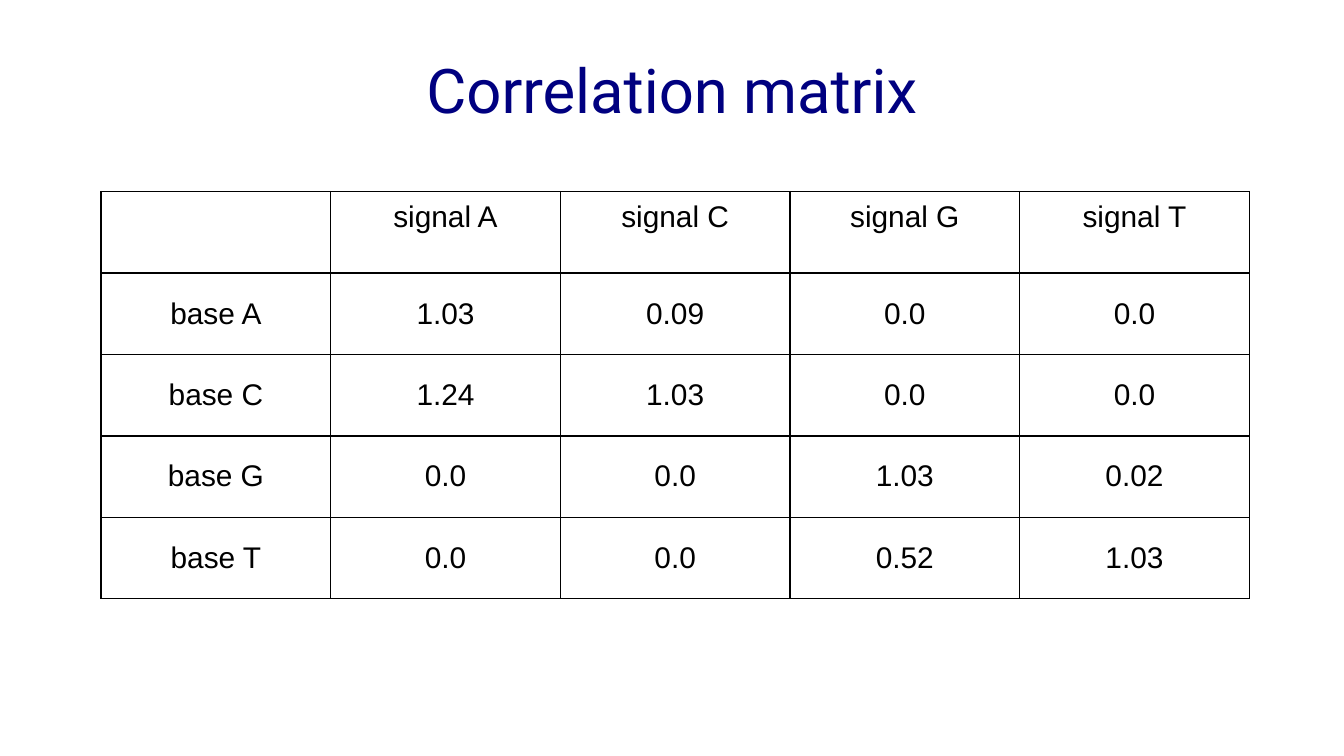
from lxml.etree import SubElement
from pptx import Presentation
from pptx.dml.color import RGBColor
from pptx.enum.text import MSO_ANCHOR, PP_ALIGN
from pptx.oxml.ns import qn
from pptx.util import Cm, Pt

ROWS = [
    ["", "signal A", "signal C", "signal G", "signal T"],
    ["base A", "1.03", "0.09", "0.0", "0.0"],
    ["base C", "1.24", "1.03", "0.0", "0.0"],
    ["base G", "0.0", "0.0", "1.03", "0.02"],
    ["base T", "0.0", "0.0", "0.52", "1.03"],
]
WIDE, HIGH = 4.34, 1.54


def color(code):
    return RGBColor.from_string(code)


def write(frame, text, size=16, font="Arial", ink="000000", space=1.0):
    para = frame.paragraphs[0]
    para.alignment = PP_ALIGN.CENTER
    para.line_spacing = space
    para.font.size = Pt(size)
    if text:
        run = para.add_run()
        run.text = text
        run.font.size = Pt(size)
        run.font.name = font
        run.font.color.rgb = color(ink)


def pad(box, side, end):
    box.margin_left = box.margin_right = Cm(side)
    box.margin_top = box.margin_bottom = Cm(end)


def border(cell, ink="000000", width=0.75):
    props = cell._tc.get_or_add_tcPr()
    for side in ("lnL", "lnR", "lnT", "lnB"):
        line = SubElement(props, qn(f"a:{side}"), w=str(Pt(width)))
        fill = SubElement(line, qn("a:solidFill"))
        SubElement(fill, qn("a:srgbClr"), val=ink)


def title(slide, text):
    box = slide.shapes.add_textbox(Cm(1.27), Cm(0.56), Cm(22.86), Cm(2.39))
    frame = box.text_frame
    frame.word_wrap = True
    frame.vertical_anchor = MSO_ANCHOR.MIDDLE
    pad(frame, 0.2, 0.2)
    write(frame, text, size=33, font="Roboto", ink="000080", space=0.93)


def matrix(slide, rows):
    down, across = len(rows), len(rows[0])
    grid = slide.shapes.add_table(
        down, across, Cm(1.91), Cm(3.62), Cm(WIDE * across), Cm(HIGH * down)
    ).table
    grid.first_row = grid.horz_banding = False
    for col in grid.columns:
        col.width = Cm(WIDE)
    for i, row in enumerate(rows):
        grid.rows[i].height = Cm(HIGH)
        for j, text in enumerate(row):
            cell = grid.cell(i, j)
            cell.vertical_anchor = MSO_ANCHOR.MIDDLE if i else MSO_ANCHOR.TOP
            pad(cell, 0.23, 0.18)
            border(cell)
            cell.fill.background()
            write(cell.text_frame, text)


def main():
    deck = Presentation()
    deck.slide_width, deck.slide_height = Cm(25.4), Cm(14.29)
    slide = deck.slides.add_slide(deck.slide_layouts[6])
    title(slide, "Correlation matrix")
    matrix(slide, ROWS)
    deck.save("out.pptx")


if __name__ == "__main__":
    main()
